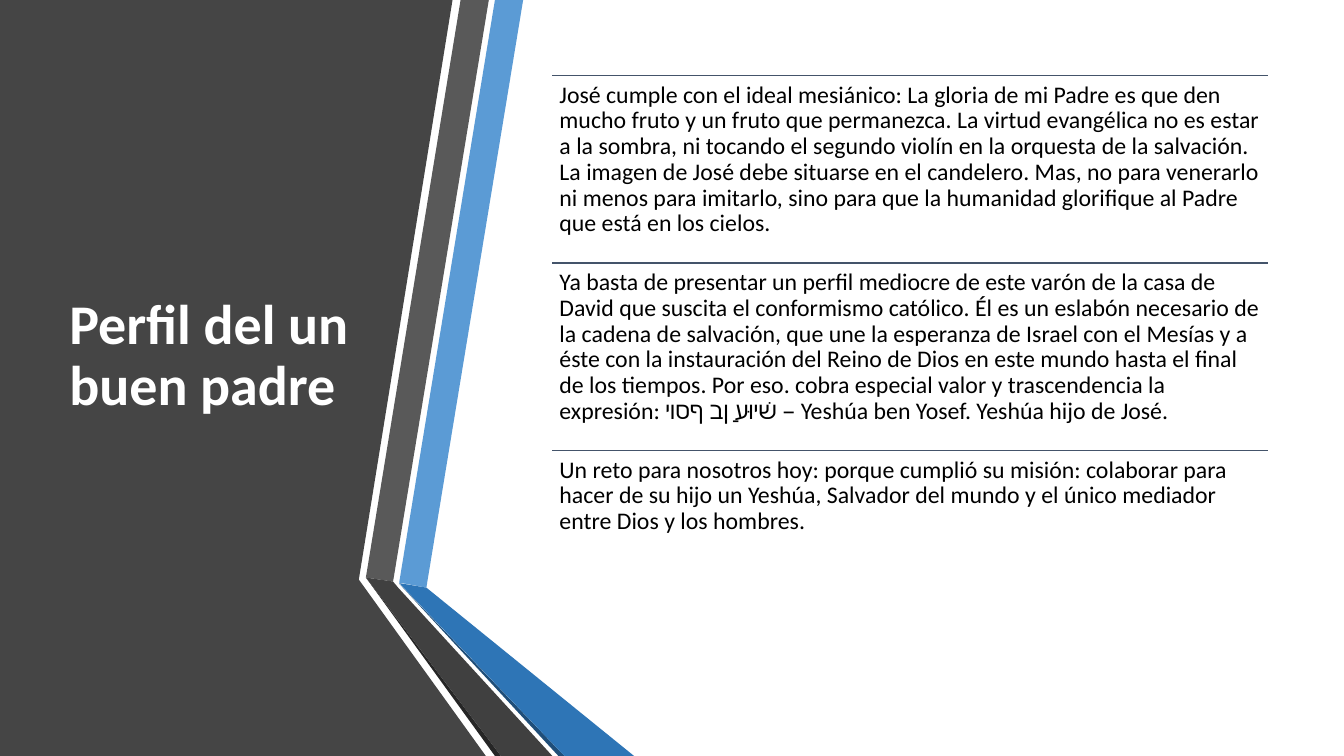
from dataclasses import dataclass

from lxml.etree import SubElement
from pptx import Presentation
from pptx.dml.color import RGBColor
from pptx.enum.shapes import MSO_CONNECTOR
from pptx.enum.text import MSO_ANCHOR, PP_ALIGN
from pptx.oxml.ns import qn
from pptx.util import Inches, Pt


@dataclass(frozen=True)
class Theme:
    font: str = "Calibri"
    title_size: int = 40
    body_size: int = 17
    white: str = "FFFFFF"
    black: str = "000000"
    rule: str = "44546A"
    panel: str = "454545"
    blue: str = "5B9BD5"
    blue_dark: str = "2E75B6"
    blue_shade: str = "1F4E79"
    gray: str = "595959"
    gray_dark: str = "404040"
    gray_shade: str = "262626"


def apply(target, values):
    for name, value in values.items():
        setattr(target, name, value)


class SlideBuilder:
    COLS, ROWS = 40, 30

    def __init__(self, prs, theme):
        self.theme = theme
        self.s = prs.slides.add_slide(prs.slide_layouts[6])
        self.col = prs.slide_width / self.COLS
        self.row = prs.slide_height / self.ROWS

    def at(self, col, row):
        return round(col * self.col), round(row * self.row)

    def polygon(self, color, points):
        pts = [self.at(*point) for point in points]
        builder = self.s.shapes.build_freeform(*pts[0])
        builder.add_line_segments(pts[1:], close=True)
        sp = builder.convert_to_shape()
        sp.shadow.inherit = False
        sp.fill.solid()
        sp.fill.fore_color.rgb = RGBColor.from_string(color)
        sp.line.fill.background()

    def rule(self, col, row, cols):
        ends = *self.at(col, row), *self.at(col + cols, row)
        line = self.s.shapes.add_connector(MSO_CONNECTOR.STRAIGHT, *ends)
        line.line.color.rgb = RGBColor.from_string(self.theme.rule)
        line.line.width = Pt(1)
        SubElement(line._element.spPr, qn("a:effectLst"))

    def text(self, box, words, color, font, frame, para):
        col, row, cols, rows = box
        sp = self.s.shapes.add_textbox(*self.at(col, row), *self.at(cols, rows))
        tf = sp.text_frame
        apply(tf, {"word_wrap": True, **frame})
        p = tf.paragraphs[0]
        apply(p, {"line_spacing": 0.9, "alignment": PP_ALIGN.LEFT, **para})
        r = p.add_run()
        r.text = words
        apply(r.font, {"name": self.theme.font, **font})
        r.font.color.rgb = RGBColor.from_string(color)

    def title(self, box, words):
        self.text(box, words, self.theme.white,
                  {"size": Pt(self.theme.title_size), "bold": True},
                  {"vertical_anchor": MSO_ANCHOR.MIDDLE}, {})

    def passage(self, box, words):
        self.rule(*box[:3])
        sides = ("left", "top", "right", "bottom")
        self.text(box, words, self.theme.black,
                  {"size": Pt(self.theme.body_size)},
                  {f"margin_{side}": Inches(0.07) for side in sides},
                  {"space_after": Pt(6)})


PASSAGES = [
    "José cumple con el ideal mesiánico: La gloria de mi Padre es que den "
    "mucho fruto y un fruto que permanezca. La virtud evangélica no es estar "
    "a la sombra, ni tocando el segundo violín en la orquesta de la salvación. "
    "La imagen de José debe situarse en el candelero. Mas, no para venerarlo "
    "ni menos para imitarlo, sino para que la humanidad glorifique al Padre "
    "que está en los cielos.",
    "Ya basta de presentar un perfil mediocre de este varón de la casa de "
    "David que suscita el conformismo católico. Él es un eslabón necesario de "
    "la cadena de salvación, que une la esperanza de Israel con el Mesías y a "
    "éste con la instauración del Reino de Dios en este mundo hasta el final "
    "de los tiempos. Por eso. cobra especial valor y trascendencia la "
    "expresión: שיׁוּע ַןב ףסוי – Yeshúa ben Yosef. Yeshúa hijo de José.",
    "Un reto para nosotros hoy: porque cumplió su misión: colaborar para "
    "hacer de su hijo un Yeshúa, Salvador del mundo y el único mediador "
    "entre Dios y los hombres.",
]


def main():
    prs = Presentation()
    prs.slide_width, prs.slide_height = Inches(13.33), Inches(7.5)
    theme = Theme()
    slide = SlideBuilder(prs, theme)

    ribbons = [
        (theme.panel, [(0, 0), (13.47, 0), (10.68, 23), (14.46, 30), (0, 30)]),
        (theme.blue, [(11.88, 23.12), (12.69, 23.32), (15.57, 0), (14.73, 0)]),
        (theme.gray, [(14.55, 0), (13.71, 0), (10.89, 22.92), (11.7, 23.08)]),
        (theme.gray_shade, [(10.89, 22.92), (14.73, 30), (14.91, 30)]),
        (theme.blue_shade, [(11.88, 23.16), (16.62, 30), (16.8, 30)]),
        (theme.blue_dark, [(11.88, 23.14), (16.8, 30), (18.87, 30),
                           (12.69, 23.32)]),
        (theme.gray_dark, [(16.44, 30), (11.85, 23.32), (11.7, 23.08),
                           (10.89, 22.92), (14.91, 30)]),
    ]
    for color, points in ribbons:
        slide.polygon(color, points)

    top, band = 3, 7.44
    slide.title((1.77, top, 9.12, band * len(PASSAGES)),
                "Perfil del un buen padre")
    for i, words in enumerate(PASSAGES):
        slide.passage((16.44, top + i * band, 21.3, band), words)

    prs.save("out.pptx")


if __name__ == "__main__":
    main()
